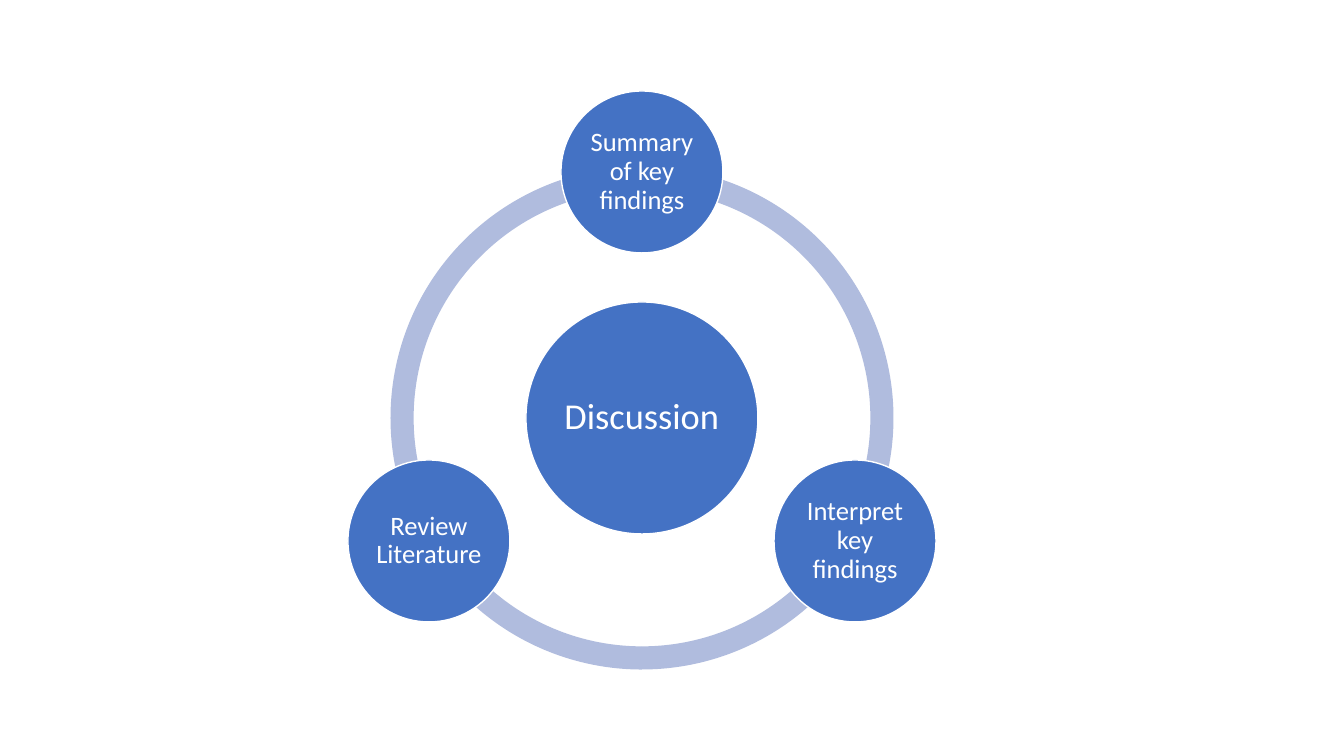
from dataclasses import dataclass
from math import cos, radians, sin

from pptx import Presentation
from pptx.dml.color import RGBColor
from pptx.enum.shapes import MSO_SHAPE
from pptx.enum.text import MSO_ANCHOR, PP_ALIGN
from pptx.util import Pt

EMU_PER_PX = 914400 / 100.8


def px(n):
    return round(n * EMU_PER_PX)


@dataclass(frozen=True)
class Theme:
    font: str = "Calibri"
    node: str = "4472C4"
    ring: str = "B0BCDE"
    light: str = "FFFFFF"
    hub_size: int = 26
    topic_size: int = 19
    outline: int = 1
    line_spacing: float = 0.9


def write(tf, text, *, size, color, font, spacing, inset):
    """Set centred, wrapped text in a text frame."""
    tf.word_wrap = True
    tf.vertical_anchor = MSO_ANCHOR.MIDDLE
    tf.margin_left = tf.margin_right = px(inset)
    tf.margin_top = tf.margin_bottom = px(inset)
    p = tf.paragraphs[0]
    p.alignment = PP_ALIGN.CENTER
    p.line_spacing = spacing
    r = p.add_run()
    r.text = text
    r.font.size = Pt(size)
    r.font.name = font
    r.font.color.rgb = RGBColor.from_string(color)


class RadialSlide:
    def __init__(self, slide, theme):
        self.s = slide
        self.theme = theme

    def round_shape(self, kind, cx, cy, diameter, fill):
        """Add a filled shape in a square box centred on (cx, cy)."""
        sp = self.s.shapes.add_shape(
            kind, px(cx - diameter / 2), px(cy - diameter / 2),
            px(diameter), px(diameter))
        sp.shadow.inherit = False
        sp.fill.solid()
        sp.fill.fore_color.rgb = RGBColor.from_string(fill)
        return sp

    def arc(self, cx, cy, diameter, start, end, thickness):
        """Add a ring segment; angles in degrees, thickness as a share of the diameter."""
        sp = self.round_shape(MSO_SHAPE.BLOCK_ARC, cx, cy, diameter, self.theme.ring)
        sp.line.fill.background()
        # Angles are stored in 1/60000 degree, adjustments in 1/100000.
        for i, value in enumerate((start * 0.6, end * 0.6, thickness)):
            sp.adjustments[i] = value

    def node(self, text, cx, cy, diameter, size, inset):
        t = self.theme
        sp = self.round_shape(MSO_SHAPE.OVAL, cx, cy, diameter, t.node)
        sp.line.color.rgb = RGBColor.from_string(t.light)
        sp.line.width = Pt(t.outline)
        write(sp.text_frame, text, size=size, color=t.light, font=t.font,
              spacing=t.line_spacing, inset=inset)


def main():
    prs = Presentation()
    prs.slide_width, prs.slide_height = px(1344), px(756)
    theme = Theme()
    diagram = RadialSlide(prs.slides.add_slide(prs.slide_layouts[6]), theme)

    cx, cy, orbit = 642, 418, 246
    for start, end in ((90, 162), (18, 90), (162, 18)):
        diagram.arc(cx, cy, 503, start, end, 0.046)

    diagram.node("Discussion", cx, cy, 232, theme.hub_size, 4)
    topics = ("Summary of key findings", "Interpret key findings", "Review Literature")
    for i, topic in enumerate(topics):
        angle = radians(-90 + i * 360 / len(topics))
        diagram.node(topic, cx + orbit * cos(angle), cy + orbit * sin(angle),
                     162, theme.topic_size, 3)

    prs.save("out.pptx")


if __name__ == "__main__":
    main()
